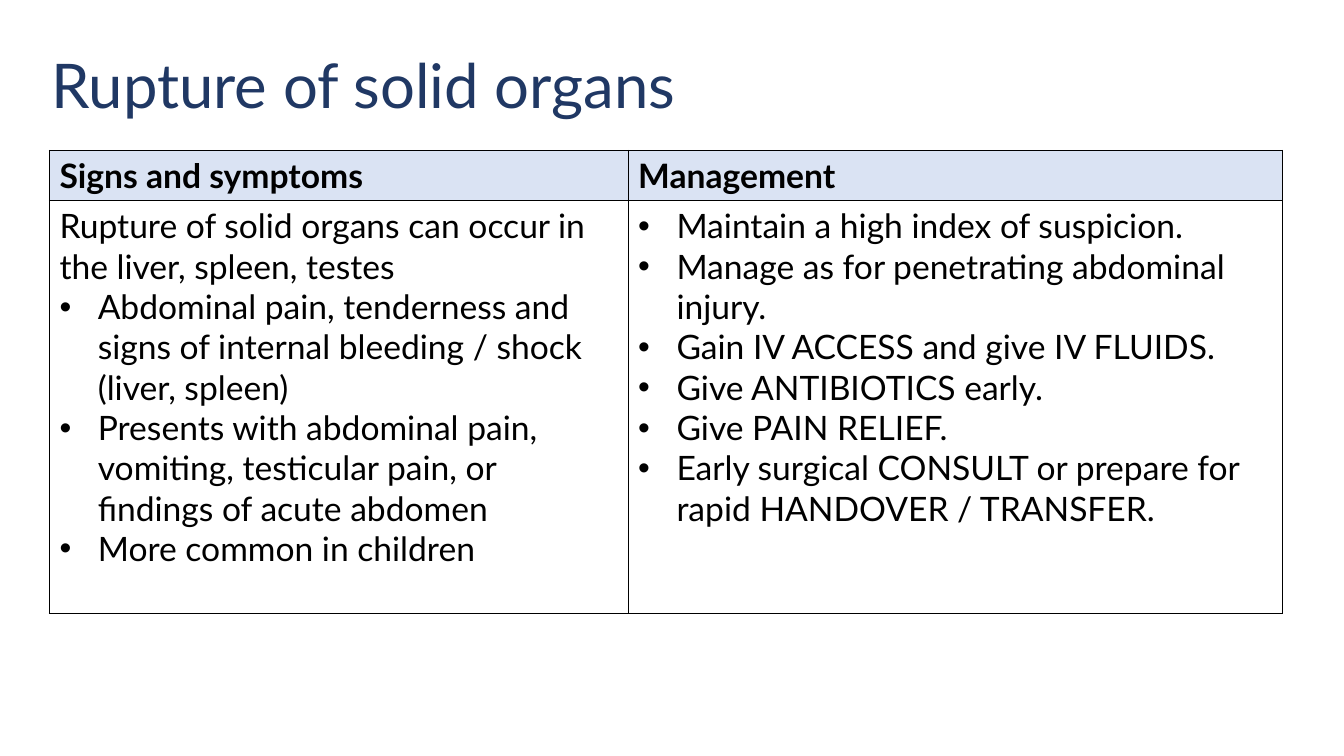
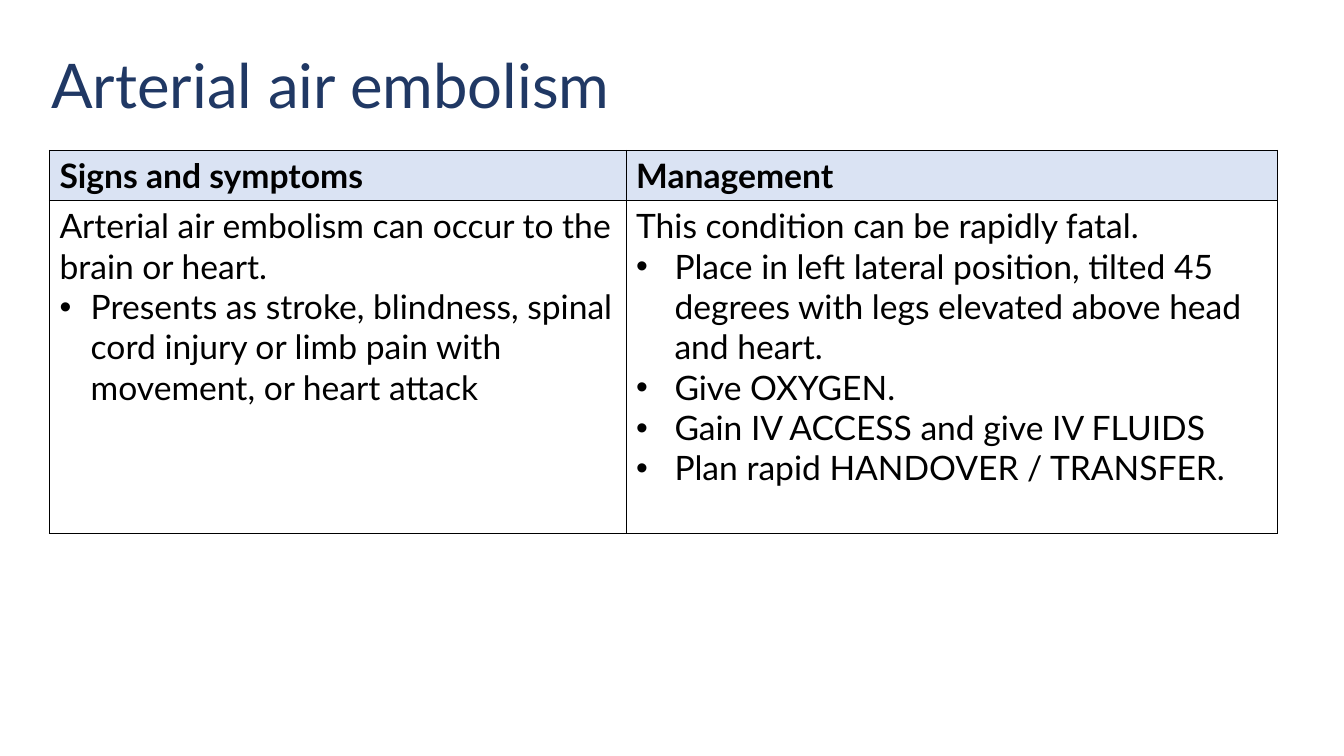
from pptx import Presentation
from pptx import util as u
from pptx.dml.color import RGBColor
from pptx.enum import text
from pptx.oxml import parse_xml
from pptx.oxml.ns import nsdecls

PX = 9144
FONT = "Lato"
NAVY = RGBColor(0x20, 0x38, 0x64)
BLACK = RGBColor(0, 0, 0)
PALE = RGBColor(0xDA, 0xE3, 0xF3)
HEADS = ("Signs and symptoms", "Management")
HEAD_H = 50

TITLE = {"size": u.Pt(44), "name": FONT, "bold": False}
HEAD = {"size": u.Pt(24), "name": FONT, "bold": True}
BODY = {**HEAD, "bold": False}

PAGES = (
    {
        "title": "Rupture of solid organs",
        "cols": (574, 649),
        "depth": 410,
        "cells": (
            ("Rupture of solid organs can occur in the liver, spleen, testes", 38, (
                "Abdominal pain, tenderness and signs of internal bleeding / shock (liver, spleen)",
                "Presents with abdominal pain, vomiting, testicular pain, or findings of acute abdomen",
                "More common in children",
            )),
            (None, 38, (
                "Maintain a high index of suspicion.",
                "Manage as for penetrating abdominal injury.",
                "Gain IV ACCESS and give IV FLUIDS.",
                "Give ANTIBIOTICS early.",
                "Give PAIN RELIEF.",
                "Early surgical CONSULT or prepare for rapid HANDOVER / TRANSFER.",
            )),
        ),
    },
    {
        "title": "Arterial air embolism",
        "cols": (572, 646),
        "depth": 330,
        "cells": (
            ("Arterial air embolism can occur to the brain or heart.", 31, (
                "Presents as stroke, blindness, spinal cord injury or limb pain with movement, or heart attack",
            )),
            ("This condition can be rapidly fatal.", 38, (
                "Place in left lateral position, tilted 45 degrees with legs elevated above head and heart.",
                "Give OXYGEN.",
                "Gain IV ACCESS and give IV FLUIDS",
                "Plan rapid HANDOVER / TRANSFER.",
            )),
        ),
    },
)


def px(*vals):
    return [u.Emu(val * PX) for val in vals]


def assign(item, form):
    for key, val in form.items():
        setattr(item, key, val)


def write(para, words, form, color):
    run = para.add_run()
    run.text = words
    assign(run.font, form)
    run.font.color.rgb = color


def bullet(para, indent):
    props = para._p.get_or_add_pPr()
    props.set("marL", str(indent * PX))
    props.set("indent", str(-indent * PX))
    for mark in (
        f'<a:buClr {nsdecls("a")}><a:srgbClr val="{BLACK}"/></a:buClr>',
        f'<a:buFont {nsdecls("a")} typeface="Arial"/>',
        f'<a:buChar {nsdecls("a")} char="•"/>',
    ):
        props.append(parse_xml(mark))


def border(cell):
    props = cell._tc.get_or_add_tcPr()
    for side in ("lnL", "lnR", "lnT", "lnB"):
        props.append(parse_xml(
            f'<a:{side} {nsdecls("a")} w="{u.Pt(0.75)}"><a:solidFill>'
            f'<a:srgbClr val="{BLACK}"/></a:solidFill></a:{side}>'
        ))


def add_title(slide, words):
    shape = slide.shapes.title
    assign(shape, dict(zip(("left", "top", "width", "height"), px(41, 15, 1150, 145))))
    frame = shape.text_frame
    assign(frame, {
        "word_wrap": True,
        "auto_size": text.MSO_AUTO_SIZE.NONE,
        "vertical_anchor": text.MSO_ANCHOR.MIDDLE,
    })
    para = frame.paragraphs[0]
    assign(para, {"alignment": text.PP_ALIGN.LEFT, "line_spacing": 0.9})
    write(para, words, TITLE, NAVY)


def fill_head(cell, words):
    border(cell)
    cell.fill.solid()
    cell.fill.fore_color.rgb = PALE
    write(cell.text_frame.paragraphs[0], words, HEAD, BLACK)


def fill_body(cell, intro, indent, points):
    border(cell)
    cell.fill.background()
    frame = cell.text_frame
    lines = [(intro, 0)] if intro else []
    lines += [(point, indent) for point in points]
    for pos, (words, inset) in enumerate(lines):
        para = frame.add_paragraph() if pos else frame.paragraphs[0]
        if inset:
            bullet(para, inset)
        write(para, words, BODY, BLACK)


def add_grid(slide, cols, depth, cells):
    rows = (HEAD_H, depth)
    place = px(49, 149, sum(cols), sum(rows))
    table = slide.shapes.add_table(len(rows), len(cols), *place).table
    assign(table, {"first_row": False, "horz_banding": False})
    for row, high in zip(table.rows, px(*rows)):
        row.height = high
    for col, wide in zip(table.columns, px(*cols)):
        col.width = wide
    for pos, (head, body) in enumerate(zip(HEADS, cells)):
        fill_head(table.cell(0, pos), head)
        fill_body(table.cell(1, pos), *body)


def main():
    deck = Presentation()
    deck.slide_width, deck.slide_height = px(1333, 750)
    for page in PAGES:
        slide = deck.slides.add_slide(deck.slide_layouts.get_by_name("Title Only"))
        add_title(slide, page["title"])
        add_grid(slide, page["cols"], page["depth"], page["cells"])
    deck.save("out.pptx")


if __name__ == "__main__":
    main()
